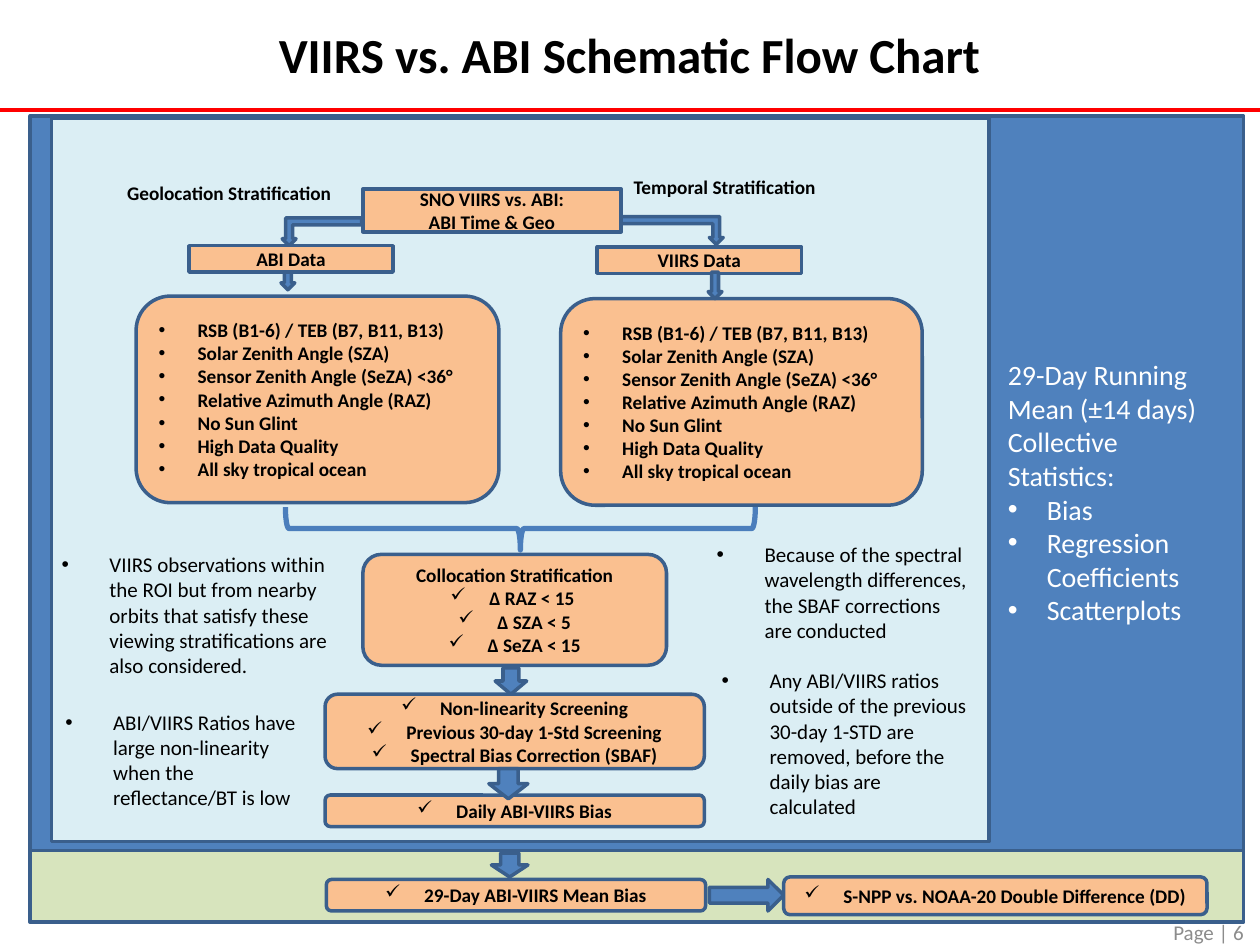
from dataclasses import dataclass

from lxml import etree
from pptx import Presentation
from pptx.dml.color import RGBColor
from pptx.enum.shapes import MSO_CONNECTOR, MSO_SHAPE
from pptx.enum.text import MSO_ANCHOR, MSO_AUTO_SIZE, PP_ALIGN
from pptx.oxml.ns import qn
from pptx.util import Inches, Pt

RECT = MSO_SHAPE.RECTANGLE
ROUND = MSO_SHAPE.ROUNDED_RECTANGLE
DOWN = MSO_SHAPE.DOWN_ARROW
RIGHT = MSO_SHAPE.RIGHT_ARROW
BENT = MSO_SHAPE.BENT_UP_ARROW
BRACE = MSO_SHAPE.RIGHT_BRACE
LEFT, CENTER, END = PP_ALIGN.LEFT, PP_ALIGN.CENTER, PP_ALIGN.RIGHT
TOP, MIDDLE = MSO_ANCHOR.TOP, MSO_ANCHOR.MIDDLE

FONT = "Calibri"
DOT, CHECK = "•", "✓"
COLORS = {
    "blue": "4F81BD", "edge": "3A5F8C", "brace": "4B7EBC", "pale": "DBEEF4",
    "green": "D7E4BD", "peach": "FAC090", "red": "FF0000", "gray": "8C8C8C",
    "black": "000000", "white": "FFFFFF",
}


@dataclass
class Box:
    left: float
    top: float
    width: float
    height: float

    def inches(self) -> tuple:
        return tuple(Inches(n) for n in (self.left, self.top, self.width, self.height))


@dataclass
class Step:
    """A peach box of the flow; the first `plain` lines carry no bullet."""
    box: Box
    lines: list
    kind: int = ROUND
    bullet: str = CHECK
    plain: int = 0
    align: int = CENTER
    inset: tuple = (0, 0, 0, 0)


@dataclass
class Arrow:
    box: Box
    kind: int = DOWN
    flip: str = ""


PAD = (0.1, 0.05, 0.1, 0.05)
FILTERS = [
    "RSB (B1-6) / TEB (B7, B11, B13)", "Solar Zenith Angle (SZA)",
    "Sensor Zenith Angle (SeZA) <36°", "Relative Azimuth Angle (RAZ)",
    "No Sun Glint", "High Data Quality", "All sky tropical ocean",
]
PANELS = [
    (Box(0.24, 0.92, 9.63, 5.88), "blue"),
    (Box(0.24, 6.75, 9.63, 0.57), "green"),
    (Box(0.41, 0.94, 7.44, 5.74), "pale"),
]
HEADS = [
    Step(Box(2.88, 1.5, 2.05, 0.34), ["SNO VIIRS vs. ABI:", "ABI Time & Geo"], RECT, "", inset=PAD),
    Step(Box(1.5, 1.95, 1.62, 0.21), ["ABI Data"], RECT, "", inset=PAD),
    Step(Box(4.74, 1.96, 1.62, 0.21), ["VIIRS Data"], RECT, "", inset=PAD),
]
STEPS = [
    Step(Box(1.08, 2.35, 2.88, 1.64), FILTERS, bullet=DOT, align=LEFT, inset=PAD),
    Step(Box(4.45, 2.37, 2.87, 1.64), FILTERS, bullet=DOT, align=LEFT, inset=PAD),
    Step(Box(2.88, 4.4, 2.41, 0.88),
         ["Collocation Stratification", "∆ RAZ < 15 ", "∆ SZA < 5", "∆ SeZA < 15"], plain=1),
    Step(Box(2.58, 5.51, 3.01, 0.59),
         ["Non-linearity Screening", "Previous 30-day 1-Std Screening",
          "Spectral Bias Correction (SBAF)"]),
    Step(Box(2.58, 6.31, 3.01, 0.25), ["Daily ABI-VIIRS Bias"]),
    Step(Box(2.59, 6.98, 3.01, 0.25), ["29-Day ABI-VIIRS Mean Bias"]),
    Step(Box(6.22, 6.96, 3.36, 0.3), ["S-NPP vs. NOAA-20 Double Difference (DD)"]),
]
ARROWS = [
    Arrow(Box(2.24, 1.73, 0.63, 0.22), BENT, "HV"),
    Arrow(Box(4.93, 1.72, 0.81, 0.22), BENT, "V"),
    Arrow(Box(2.23, 2.16, 0.11, 0.14)),
    Arrow(Box(5.62, 2.16, 0.11, 0.21)),
    Arrow(Box(3.93, 5.3, 0.25, 0.21)),
    Arrow(Box(3.88, 6.1, 0.31, 0.24)),
    Arrow(Box(3.9, 6.77, 0.29, 0.19)),
    Arrow(Box(5.63, 6.98, 0.59, 0.25), RIGHT),
]
LABELS = [
    (Box(4.93, 1.34, 1.67, 0.29), "Temporal Stratification"),
    (Box(0.91, 1.39, 3.21, 0.29), "Geolocation Stratification"),
]
NOTES = [
    (Box(0.39, 4.33, 2.41, 1.11), "VIIRS observations within the ROI but from nearby orbits "
     "that satisfy these viewing stratifications are also considered."),
    (Box(0.42, 5.58, 2.16, 0.91),
     "ABI/VIIRS Ratios have large non-linearity when the reflectance/BT is low"),
    (Box(5.59, 4.25, 2.23, 0.91),
     "Because of the spectral wavelength differences, the SBAF corrections are conducted"),
    (Box(5.63, 5.25, 2.14, 1.31), "Any ABI/VIIRS ratios outside of the previous 30-day 1-STD "
     "are removed, before the daily bias are calculated"),
]
STATS = ["29-Day Running Mean (±14 days)", "Collective Statistics:",
         "Bias", "Regression Coefficients", "Scatterplots"]


def paint(name: str) -> RGBColor:
    return RGBColor.from_string(COLORS[name])


def mark(para, sign: str, indent: float) -> None:
    """Give a paragraph a bullet with a hanging indent."""
    props = para._p.get_or_add_pPr()
    props.set("marL", str(Inches(indent)))
    props.set("indent", str(-Inches(indent)))
    if sign == DOT:
        etree.SubElement(props, qn("a:buFont")).set("typeface", "Arial")
    etree.SubElement(props, qn("a:buChar")).set("char", sign)


def write(shape, lines: list, *, size: int = 11, bold: bool = False, color: str = "black",
          align: int = LEFT, anchor: int = MIDDLE, inset: tuple = PAD, bullet: str = "",
          plain: int = 0, indent: float = 0.31, grow: bool = False) -> None:
    frame = shape.text_frame
    frame.word_wrap = True
    frame.auto_size = MSO_AUTO_SIZE.SHAPE_TO_FIT_TEXT if grow else MSO_AUTO_SIZE.NONE
    frame.vertical_anchor = anchor
    frame.margin_left, frame.margin_top, frame.margin_right, frame.margin_bottom = map(Inches, inset)
    for i, line in enumerate(lines):
        para = frame.paragraphs[0] if i == 0 else frame.add_paragraph()
        para.alignment = align
        if bullet and i >= plain:
            mark(para, bullet, indent)
        run = para.add_run()
        run.text = line
        for font in (para.font, run.font):
            font.name, font.size, font.bold = FONT, Pt(size), bold
            font.color.rgb = paint(color)


def draw(slide, kind: int, box: Box, fill: str = "", line: str = "edge", weight: float = 2):
    shape = slide.shapes.add_shape(kind, *box.inches())
    shape.shadow.inherit = False
    if fill:
        shape.fill.solid()
        shape.fill.fore_color.rgb = paint(fill)
    else:
        shape.fill.background()
    if line:
        shape.line.color.rgb = paint(line)
        shape.line.width = Pt(weight)
    else:
        shape.line.fill.background()
    return shape


def label(slide, box: Box, text: str, **style) -> None:
    write(slide.shapes.add_textbox(*box.inches()), [text], **style)


def rule(slide, top: float) -> None:
    line = slide.shapes.add_connector(
        MSO_CONNECTOR.STRAIGHT, Inches(0), Inches(top), Inches(10), Inches(top))
    line.line.color.rgb = paint("red")
    line.line.width = Pt(2.25)
    etree.SubElement(line._element.spPr, qn("a:effectLst"))


def place(slide, step: Step) -> None:
    write(draw(slide, step.kind, step.box, "peach"), step.lines, bold=True, align=step.align,
          inset=step.inset, bullet=step.bullet, plain=step.plain)


def point(slide, arrow: Arrow) -> None:
    shape = draw(slide, arrow.kind, arrow.box, "blue")
    for axis in arrow.flip:
        shape._element.spPr.xfrm.set("flip" + axis, "1")


def main() -> None:
    deck = Presentation()
    deck.slide_width, deck.slide_height = Inches(10), Inches(7.5)
    slide = deck.slides.add_slide(deck.slide_layouts[6])
    rule(slide, 0.87)
    for box, fill in PANELS:
        draw(slide, RECT, box, fill)
    label(slide, Box(0.87, 0, 8.25, 0.86), "VIIRS vs. ABI Schematic Flow Chart",
          size=28, bold=True, align=CENTER)
    label(slide, Box(7.64, 7.3, 2.33, 0.2), "Page | 6", size=12, color="gray", align=END)
    draw(slide, BRACE, Box(3.96, 2.33, 0.34, 3.73), line="brace", weight=3).rotation = 90
    for step in HEADS + STEPS:
        place(slide, step)
    for arrow in ARROWS:
        point(slide, arrow)
    for box, text in LABELS:
        label(slide, box, text, bold=True, anchor=TOP, grow=True)
    for box, text in NOTES:
        label(slide, box, text, size=12, anchor=TOP, bullet=DOT, indent=0.38, grow=True)
    side = draw(slide, RECT, Box(7.9, 1.04, 1.91, 5.46), "blue", line="")
    write(side, STATS, size=16, color="white", bullet=DOT, plain=2, inset=(0.1, 0.32, 0.1, 0.05))
    deck.save("out.pptx")


if __name__ == "__main__":
    main()
